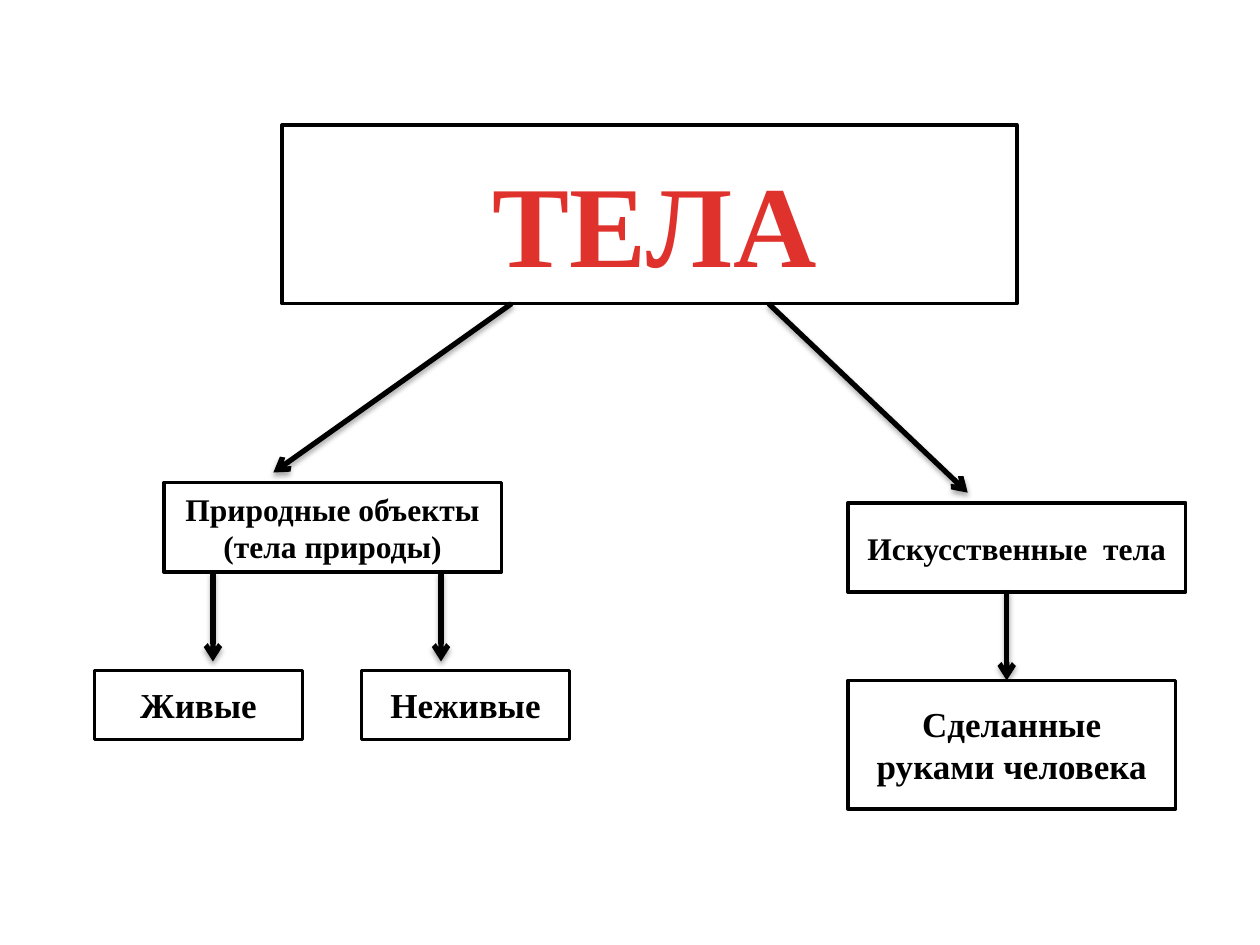
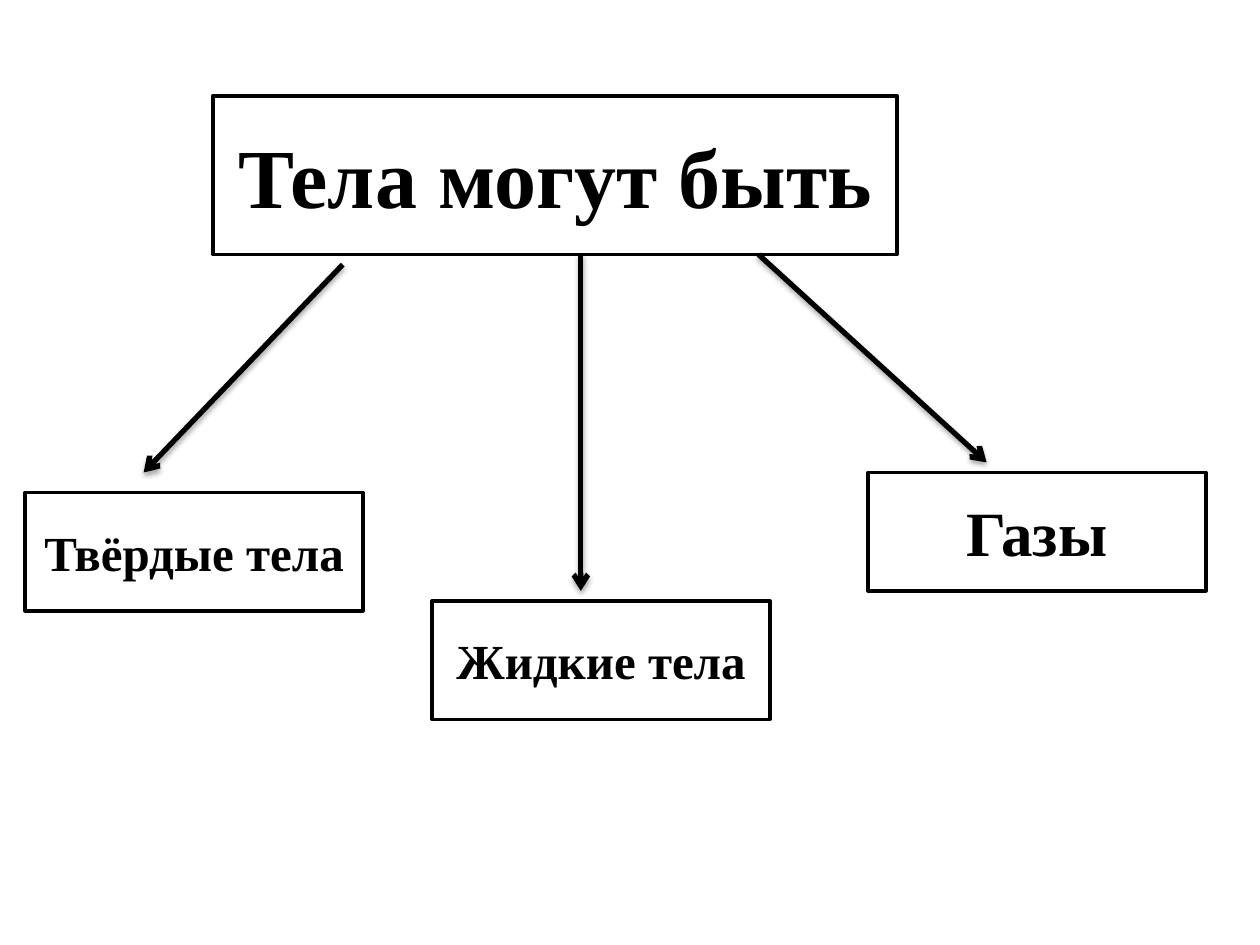
from lxml.etree import SubElement
from pptx import Presentation
from pptx.dml.color import RGBColor
from pptx.enum.shapes import MSO_CONNECTOR as Connector, MSO_SHAPE as Shape
from pptx.enum.text import MSO_ANCHOR as Anchor, MSO_AUTO_SIZE as AutoSize, PP_ALIGN as Align
from pptx.oxml.ns import qn
from pptx.util import Inches, Pt

# Shared look: the grid is ten columns and ten rows to the inch
WIDTH, HEIGHT = Inches(10), Inches(7.5)
COLUMNS, ROWS = 100, 75
BLACK, WHITE, RED = "000000", "FFFFFF", "E0322D"
FONT = {"name": "Times New Roman", "bold": True}
FRAME = {"word_wrap": True, "auto_size": AutoSize.NONE, "vertical_anchor": Anchor.MIDDLE}
BOX_LINE, ARROW_LINE = Pt(2), Pt(3)
SHADOW = {"blurRad": Pt(3.1), "dist": Pt(1.8), "dir": 90 * 60000, "rotWithShape": 0}
SHADOW_ALPHA = 35000


def paint(color, hex_code):
    color.rgb = RGBColor.from_string(hex_code)


def apply(target, values):
    for name, value in values.items():
        setattr(target, name, value)


def add_xml(parent, tag, **attributes):
    return SubElement(parent, qn(tag), {key: str(value) for key, value in attributes.items()})


class Diagram:
    """Holds the deck's style and the current slide."""

    def __init__(self):
        self.deck = Presentation()
        apply(self.deck, {"slide_width": WIDTH, "slide_height": HEIGHT})
        self.page = None

    def new_page(self):
        title_only = self.deck.slide_layouts[5]
        self.page = self.deck.slides.add_slide(title_only)

    def place(self, column, row):
        return round(WIDTH * column / COLUMNS), round(HEIGHT * row / ROWS)

    def style(self, box, text, size, color, insets=None):
        box.fill.solid()
        paint(box.fill.fore_color, WHITE)
        paint(box.line.color, BLACK)
        box.line.width = BOX_LINE
        frame = box.text_frame
        apply(frame, FRAME | (insets or {}))
        frame.text = text
        for para in frame.paragraphs:
            para.alignment = Align.CENTER
            for span in para.runs:
                apply(span.font, FONT | {"size": Pt(size)})
                paint(span.font.color, color)

    def title(self, text, column, row, columns, rows, size, color=BLACK, insets=None):
        box = self.page.shapes.title
        left, top = self.place(column, row)
        width, height = self.place(columns, rows)
        apply(box, {"left": left, "top": top, "width": width, "height": height})
        self.style(box, text, size, color, insets)

    def box(self, text, column, row, columns, rows, size):
        box = self.page.shapes.add_shape(
            Shape.RECTANGLE, *self.place(column, row), *self.place(columns, rows))
        box.shadow.inherit = False
        self.style(box, text, size, BLACK)

    def arrow(self, start, end):
        arrow = self.page.shapes.add_connector(
            Connector.STRAIGHT, *self.place(*start), *self.place(*end))
        paint(arrow.line.color, BLACK)
        arrow.line.width = ARROW_LINE
        properties = arrow.element.spPr
        add_xml(properties.find(qn("a:ln")), "a:tailEnd", type="arrow")
        effects = add_xml(properties, "a:effectLst")
        shadow = add_xml(effects, "a:outerShdw", **SHADOW)
        shade = add_xml(shadow, "a:srgbClr", val=BLACK)
        add_xml(shade, "a:alpha", val=SHADOW_ALPHA)


def build_kinds(diagram):
    """Natural and man-made bodies."""
    diagram.new_page()
    diagram.title("ТЕЛА", 22.4, 9.9, 58.3, 14.2, 66, RED,
                  {"margin_left": Inches(0.18), "margin_top": Inches(0.16)})
    for span in diagram.page.shapes.title.text_frame.paragraphs[0].runs:
        span.font._element.set("spc", "50")

    # From the title to the two kinds
    title_bottom = 24.1
    diagram.arrow((40.6, title_bottom), (21.7, 37.5))
    diagram.arrow((61, title_bottom), (76.8, 39.1))
    kind_size = (26.8, 7.1)
    diagram.box("Природные объекты\n(тела природы)", 13, 38.3, *kind_size, 18)
    diagram.box("Искусственные  тела", 67.3, 39.9, *kind_size, 18)

    # From the kinds to their examples
    for column, row in ((16.9, 45.4), (35, 45.4), (79.9, 46.9)):
        diagram.arrow((column, row), (column, row + 7.1))
    for index, text in enumerate(("Живые", "Неживые")):
        diagram.box(text, 7.5 + 21.2 * index, 53.2, 16.5, 5.5, 20)
    diagram.box("Сделанные руками человека", 67.3, 54, 26, 10.2, 20)


def build_states(diagram):
    """Solid, liquid and gaseous bodies."""
    diagram.new_page()
    diagram.title("Тела могут быть", 16.9, 7.6, 54.3, 12.6, 48)

    states = (
        ("Твёрдые тела", 2, 39.1, 28, (27.2, 21), (11.4, 37.5)),
        ("Жидкие тела", 34.3, 47.7, 28, (46.1, 20.2), (46.1, 46.9)),
        ("Газы", 68.9, 37.5, 36, (60.2, 20.2), (78.3, 36.7)),
    )
    for text, column, row, size, start, end in states:
        diagram.arrow(start, end)
        diagram.box(text, column, row, 26.8, 9.4, size)


def main():
    diagram = Diagram()
    build_kinds(diagram)
    build_states(diagram)
    diagram.deck.save("out.pptx")


if __name__ == "__main__":
    main()
